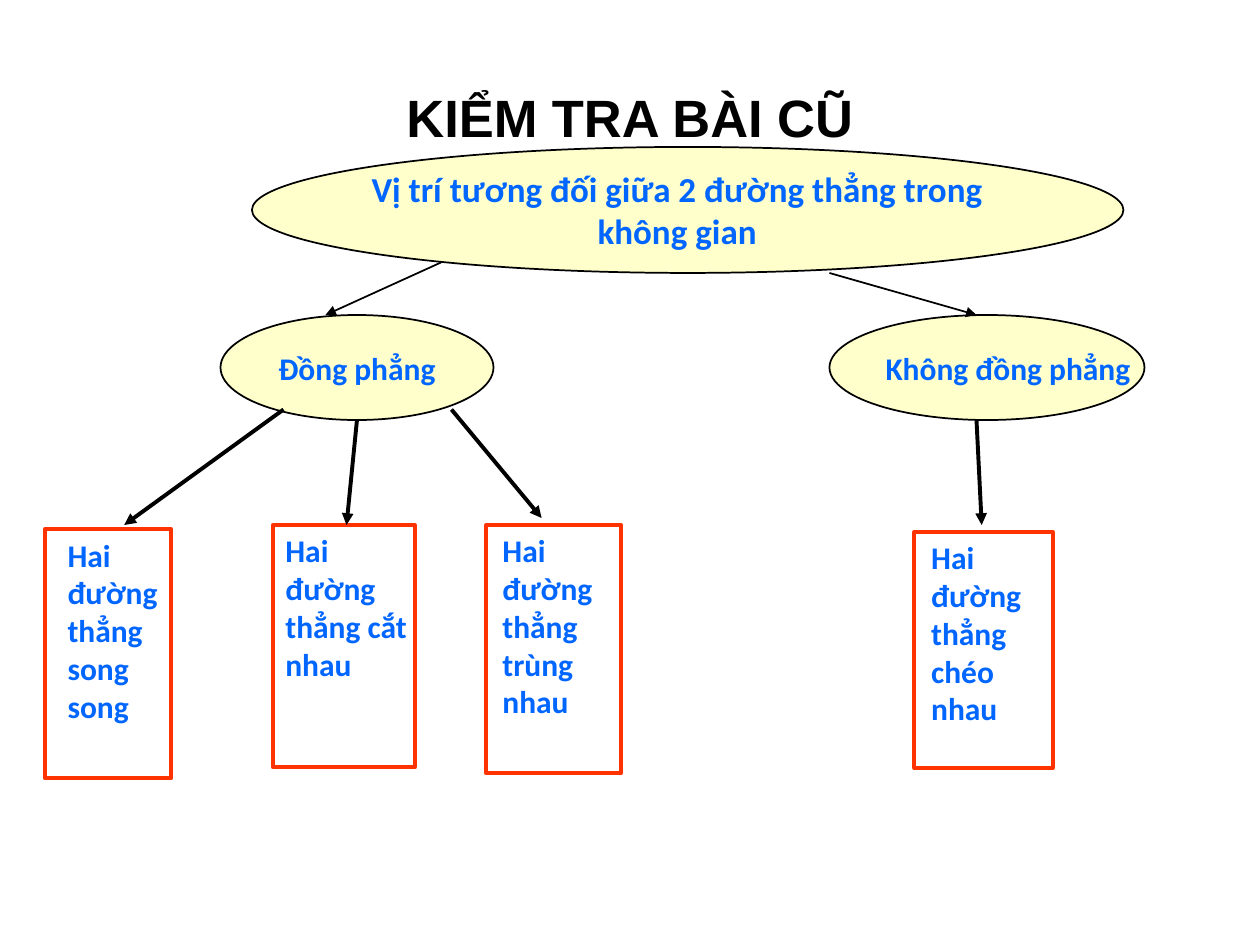
from lxml import etree
from pptx import Presentation
from pptx.dml.color import RGBColor
from pptx.enum import shapes, text
from pptx.oxml import ns
from pptx.util import Pt

COLORS = {"ink": "000000", "label": "0066FF", "oval": "FFFFCC", "frame": "FF3300"}

presentation = Presentation()
presentation.slide_width, presentation.slide_height = Pt(720), Pt(540)
slide = presentation.slides.add_slide(presentation.slide_layouts[6])


def add_text(words, bounds, size, font="Calibri", color="label",
             align=text.PP_ALIGN.CENTER, anchor=text.MSO_ANCHOR.TOP):
    frame = slide.shapes.add_textbox(*map(Pt, bounds)).text_frame
    frame.word_wrap = True
    frame.vertical_anchor = anchor
    paragraph = frame.paragraphs[0]
    paragraph.text = words
    paragraph.alignment = align
    paragraph.font.name = font
    paragraph.font.size = Pt(size)
    paragraph.font.bold = True
    paragraph.font.color.rgb = RGBColor.from_string(COLORS[color])


def add_outline(kind, bounds, line, width, fill=None):
    shape = slide.shapes.add_shape(kind, *map(Pt, bounds))
    shape.shadow.inherit = False
    shape.line.color.rgb = RGBColor.from_string(COLORS[line])
    shape.line.width = Pt(width)
    if fill:
        shape.fill.solid()
        shape.fill.fore_color.rgb = RGBColor.from_string(COLORS[fill])
    else:
        shape.fill.background()


ovals = [
    ("Đồng phẳng", 18, (126, 180, 156, 60), (138, 196, 132, 29)),
    ("Không đồng phẳng", 18, (474, 180, 180, 60), (474, 196, 204, 29)),
    ("Vị trí tương đối giữa 2 đường thẳng trong không gian", 20,
     (144, 84, 498, 72), (204, 92, 366, 55.5)),
]
for words, size, oval, label in ovals:
    add_outline(shapes.MSO_SHAPE.OVAL, oval, "ink", 1, "oval")
    add_text(words, label, size)

cases = [
    ("song song", (25.5, 302.5, 72.5, 142), 31.5, 79.5),
    ("cắt nhau", (156, 300, 81, 138.5), 156, 85),
    ("trùng nhau", (278, 300, 77, 142), 280, 74),
    ("chéo nhau", (522.5, 304, 79, 135), 525, 84),
]
for ending, box, label_left, label_width in cases:
    add_text(f"Hai đường thẳng {ending}", (label_left, box[1], label_width, box[3]),
             18, align=text.PP_ALIGN.LEFT)
    add_outline(shapes.MSO_SHAPE.RECTANGLE, box, "frame", 2.25)

arrows = [
    (252, 150, 186, 180, 1),
    (474, 156, 558, 180, 1),
    (162, 234, 71, 300, 2.25),
    (204, 240, 198, 300, 2.25),
    (258, 234, 309.5, 296, 2.25),
    (558, 240, 561, 300, 2.25),
]
for *ends, width in arrows:
    arrow = slide.shapes.add_connector(shapes.MSO_CONNECTOR.STRAIGHT, *map(Pt, ends))
    arrow.line.color.rgb = RGBColor.from_string(COLORS["ink"])
    arrow.line.width = Pt(width)
    etree.SubElement(arrow.line._get_or_add_ln(), ns.qn("a:tailEnd"), type="triangle")
    etree.SubElement(arrow._element.spPr, ns.qn("a:effectLst"))

add_text("KIỂM TRA BÀI CŨ", (36, 21.5, 648, 90), 30, "Arial", "ink",
         anchor=text.MSO_ANCHOR.MIDDLE)

presentation.save("out.pptx")
